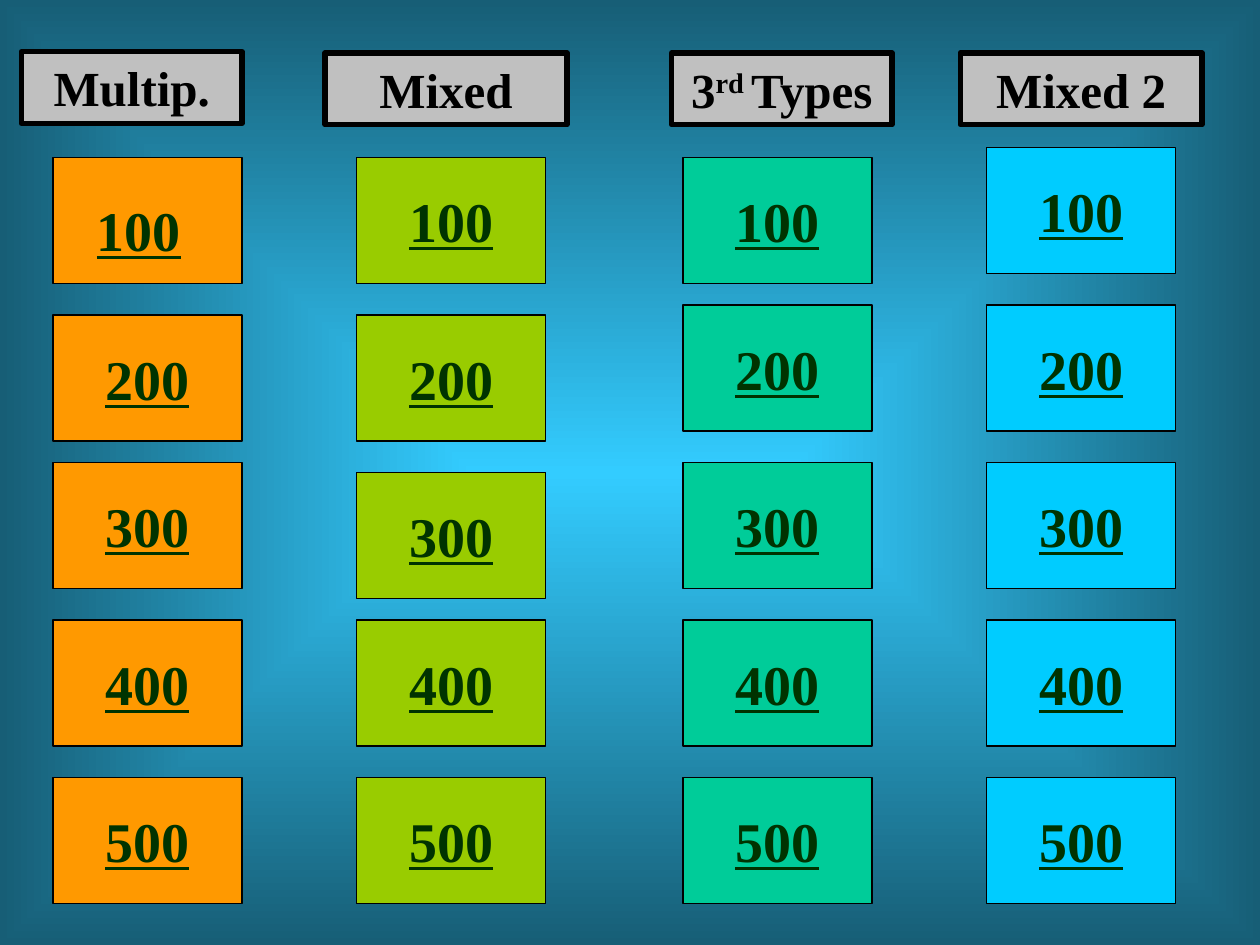
"""Build a quiz board of four topics with five point tiles each."""
from typing import NamedTuple

from lxml import etree
from pptx import Presentation
from pptx.dml.color import RGBColor
from pptx.enum import shapes, text
from pptx.oxml.ns import qn
from pptx.util import Inches, Pt

FONT = "Times New Roman"
HEX = {
    "glow": "33CCFF", "edge": "175E76", "grey": "C0C0C0", "black": "000000",
    "ink": "003300", "orange": "FF9900", "lime": "99CC00", "teal": "00CC99",
    "sky": "00CCFF",
}


class Box(NamedTuple):
    left: float
    top: float
    width: float
    height: float


class Topic(NamedTuple):
    title: tuple[str, ...]
    head: Box
    left: float
    fill: str
    tops: tuple[float, ...]


TOPICS = (
    Topic(("Multip.",), Box(0.17, 0.41, 1.75, 0.57), 0.42, "orange",
          (1.25, 2.5, 3.67, 4.92, 6.17)),
    Topic(("Mixed",), Box(2.58, 0.42, 1.92, 0.57), 2.83, "lime",
          (1.25, 2.5, 3.75, 4.92, 6.17)),
    Topic(("3", "rd ", "Types"), Box(5.33, 0.42, 1.75, 0.57), 5.42, "teal",
          (1.25, 2.42, 3.67, 4.92, 6.17)),
    Topic(("Mixed 2",), Box(7.62, 0.42, 1.92, 0.57), 7.83, "sky",
          (1.17, 2.42, 3.67, 4.92, 6.17)),
)
LOOSE = Box(0.67, 1.5, 0.92, 0.63)


def color(name: str) -> RGBColor:
    """Return a named colour."""
    return RGBColor.from_string(HEX[name])


def write(shape, parts: tuple[str, ...], *, size: int, ink: str, line: bool = False,
          center: bool = True, wrap: bool = True, middle: bool = False) -> None:
    """Write bold runs into a shape, raising every second one."""
    frame = shape.text_frame
    frame.word_wrap = wrap
    if middle:
        frame.vertical_anchor = text.MSO_ANCHOR.MIDDLE
    else:
        frame.vertical_anchor = text.MSO_ANCHOR.TOP
        frame.auto_size = text.MSO_AUTO_SIZE.SHAPE_TO_FIT_TEXT
    para = frame.paragraphs[0]
    para.alignment = text.PP_ALIGN.CENTER if center else text.PP_ALIGN.LEFT
    for i, part in enumerate(parts):
        run = para.add_run()
        run.text = part
        font = run.font
        font.name, font.size, font.bold = FONT, Pt(size), True
        font.color.rgb = color(ink)
        if line:
            font.underline = True
        if i % 2:
            run._r.get_or_add_rPr().set("baseline", "30000")


def draw(slide, kind, box: Box, fill: str, width: float):
    """Draw a filled shape with a black border."""
    shape = slide.shapes.add_shape(kind, *map(Inches, box))
    shape.shadow.inherit = False
    shape.fill.solid()
    shape.fill.fore_color.rgb = color(fill)
    shape.line.color.rgb = color("black")
    shape.line.width = Pt(width)
    return shape


def paint(slide) -> None:
    """Fill the background with a gradient that spreads from the centre."""
    fill = slide.background.fill
    fill.gradient()
    for stop, name, spot in zip(fill.gradient_stops, ("glow", "edge"), (0, 1)):
        stop.color.rgb = color(name)
        stop.position = spot
    grad = slide._element.find(".//" + qn("a:gradFill"))
    lin = grad.find(qn("a:lin"))
    spread = etree.Element(qn("a:path"), {"path": "shape"})
    etree.SubElement(spread, qn("a:fillToRect"), dict.fromkeys("ltrb", "50000"))
    grad.replace(lin, spread)


def column(slide, topic: Topic) -> None:
    """Draw one topic with its heading and tiles."""
    head = draw(slide, shapes.MSO_SHAPE.RECTANGLE, topic.head, "grey", 3)
    write(head, topic.title, size=28, ink="black")
    for row, top in enumerate(topic.tops, 1):
        tile = draw(slide, shapes.MSO_SHAPE.ACTION_BUTTON_CUSTOM,
                    Box(topic.left, top, 1.5, 1), topic.fill, 0.75)
        label = (str(row * 100),)
        if topic is TOPICS[0] and row == 1:
            note = slide.shapes.add_textbox(*map(Inches, LOOSE))
            write(note, label, size=32, ink="ink", line=True, center=False)
        else:
            write(tile, label, size=32, ink="ink", line=True, wrap=False, middle=True)


def main() -> None:
    """Build and save the board."""
    deck = Presentation()
    deck.slide_width, deck.slide_height = Inches(10), Inches(7.5)
    slide = deck.slides.add_slide(deck.slide_layouts[6])
    paint(slide)
    for topic in TOPICS:
        column(slide, topic)
    deck.save("out.pptx")


if __name__ == "__main__":
    main()
